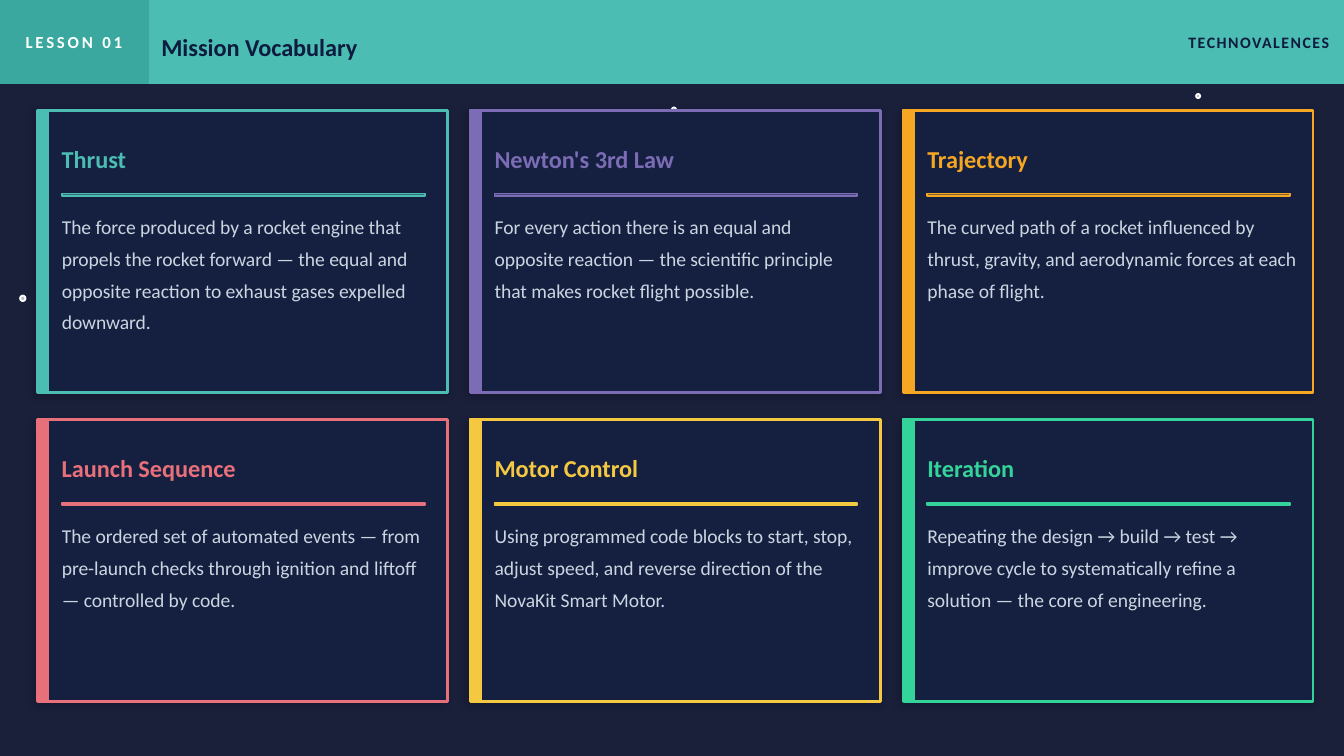
from lxml.etree import SubElement
from pptx import Presentation
from pptx.dml.color import RGBColor
from pptx.enum.shapes import MSO_SHAPE
from pptx.enum.text import MSO_ANCHOR, MSO_AUTO_SIZE, PP_ALIGN
from pptx.oxml.ns import qn
from pptx.util import Pt

FONT = "Calibri"
BACKGROUND = RGBColor(0x1A, 0x1F, 0x3A)
CARD = RGBColor(0x15, 0x20, 0x40)
NAVY = RGBColor(0x0D, 0x1B, 0x3E)
BODY = RGBColor(0xCB, 0xD5, 0xE1)
WHITE = RGBColor(0xFF, 0xFF, 0xFF)
TEAL = RGBColor(0x4B, 0xBD, 0xB3)
DARK_TEAL = RGBColor(0x3A, 0xA8, 0x9E)
PURPLE = RGBColor(0x7B, 0x6C, 0xB5)
ORANGE = RGBColor(0xF5, 0xA6, 0x23)
CORAL = RGBColor(0xE8, 0x70, 0x7A)
YELLOW = RGBColor(0xF5, 0xC8, 0x42)
GREEN = RGBColor(0x34, 0xD3, 0x99)

# Left, top, diameter, opacity in percent
STARS = [(360, 57.6, 2.16, 65), (640.8, 50.4, 2.16, 60), (10.8, 158.4, 2.88, 70)]

TERMS = [
    ("Thrust", TEAL, "The force produced by a rocket engine that propels the rocket forward — "
     "the equal and opposite reaction to exhaust gases expelled downward."),
    ("Newton's 3rd Law", PURPLE, "For every action there is an equal and opposite reaction — "
     "the scientific principle that makes rocket flight possible."),
    ("Trajectory", ORANGE, "The curved path of a rocket influenced by thrust, gravity, "
     "and aerodynamic forces at each phase of flight."),
    ("Launch Sequence", CORAL, "The ordered set of automated events — from pre-launch checks "
     "through ignition and liftoff — controlled by code."),
    ("Motor Control", YELLOW, "Using programmed code blocks to start, stop, adjust speed, "
     "and reverse direction of the NovaKit Smart Motor."),
    ("Iteration", GREEN, "Repeating the design → build → test → improve cycle to "
     "systematically refine a solution — the core of engineering."),
]


def add_block(slide, left, top, width, height, fill, line=None, line_width=1,
              opacity=100, preset=MSO_SHAPE.RECTANGLE):
    shape = slide.shapes.add_shape(preset, Pt(left), Pt(top), Pt(width), Pt(height))
    shape.shadow.inherit = False
    shape.fill.solid()
    shape.fill.fore_color.rgb = fill
    shape.line.color.rgb = line or fill
    shape.line.width = Pt(line_width)
    if opacity < 100:
        color = shape.element.spPr.find(qn("a:solidFill"))[0]
        SubElement(color, qn("a:alpha"), val=str(opacity * 1000))
    return shape


def add_shadow(shape):
    effects = shape.element.spPr.find(qn("a:effectLst"))
    shadow = SubElement(effects, qn("a:outerShdw"), blurRad=str(Pt(4)), dist=str(Pt(2)),
                        dir=str(135 * 60000), algn="bl", rotWithShape="0")
    color = SubElement(shadow, qn("a:srgbClr"), val="000000")
    SubElement(color, qn("a:alpha"), val="18000")


def format_text(shape, text, size, color, bold=True, align=PP_ALIGN.LEFT,
                anchor=MSO_ANCHOR.MIDDLE, top_inset=0, right_inset=0,
                tracking=0, line_spacing=None):
    frame = shape.text_frame
    frame.text = text
    frame.word_wrap = True
    frame.auto_size = MSO_AUTO_SIZE.NONE
    frame.vertical_anchor = anchor
    frame.margin_left = frame.margin_bottom = 0
    frame.margin_top, frame.margin_right = Pt(top_inset), Pt(right_inset)
    paragraph = frame.paragraphs[0]
    paragraph.alignment = align
    if line_spacing:
        paragraph.line_spacing = line_spacing
    font = paragraph.runs[0].font
    font.name, font.size, font.bold = FONT, Pt(size), bold
    font.color.rgb = color
    if tracking:
        paragraph.runs[0].font._element.set("spc", str(round(tracking * 100)))


def add_text(slide, left, top, width, height, text, size, color, **options):
    box = slide.shapes.add_textbox(Pt(left), Pt(top), Pt(width), Pt(height))
    format_text(box, text, size, color, **options)


def add_stars(slide):
    for left, top, diameter, opacity in STARS:
        add_block(slide, left, top, diameter, diameter, WHITE,
                  opacity=opacity, preset=MSO_SHAPE.OVAL)


def add_header(slide, left, top, width, height):
    tag_width, brand_width = 79.2, 165.6
    # Bar and lesson tag
    add_block(slide, left, top, width, height, TEAL)
    tag = add_block(slide, left, top, tag_width, height, DARK_TEAL)
    add_text(slide, left, top, tag_width, height, "LESSON 01", 9, WHITE,
             align=PP_ALIGN.CENTER, tracking=1.5)
    # Title, raised above the bar
    title = slide.shapes.title
    title.left, title.top = Pt(left + tag_width + 7.2), Pt(top)
    title.width, title.height = Pt(540), Pt(height)
    format_text(title, "Mission Vocabulary", 13, NAVY, top_inset=5.76)
    tag.element.addnext(title.element)
    # Programme name
    add_text(slide, left + width - brand_width, top, brand_width, height, "TECHNOVALENCES",
             8.5, NAVY, align=PP_ALIGN.RIGHT, right_inset=7.92, tracking=0.8)


def add_card(slide, left, top, width, height, term, color, definition):
    # Panel and accent stripe
    add_shadow(add_block(slide, left, top, width, height, CARD, color, 1.5))
    add_block(slide, left, top, 5.76, height, color)
    # Term, rule and definition
    text_left = left + 12.96
    add_text(slide, text_left, top + 8.64, width - 18, 34.56, term, 13, color)
    add_block(slide, text_left, top + 44.64, width - 25.2, 1.44, color, opacity=50)
    add_text(slide, text_left, top + 51.84, width - 21.6, 90, definition, 10.5, BODY,
             bold=False, anchor=MSO_ANCHOR.TOP, line_spacing=1.35)


def add_card_grid(slide, left, top, width, height, columns=3, rows=2):
    column_gap, row_gap = 12.24, 14.4
    card_width = (width - (columns - 1) * column_gap) / columns
    card_height = (height - (rows - 1) * row_gap) / rows
    for index, (term, color, definition) in enumerate(TERMS):
        row, column = divmod(index, columns)
        add_card(slide, left + column * (card_width + column_gap),
                 top + row * (card_height + row_gap), card_width, card_height,
                 term, color, definition)


def main():
    presentation = Presentation()
    presentation.slide_width, presentation.slide_height = Pt(720), Pt(405)
    slide = presentation.slides.add_slide(presentation.slide_layouts[5])
    slide.background.fill.solid()
    slide.background.fill.fore_color.rgb = BACKGROUND
    add_stars(slide)
    add_header(slide, 0, 0, 720, 44.64)
    add_card_grid(slide, 20.16, 59.04, 683.28, 316.8)
    presentation.save("out.pptx")


if __name__ == "__main__":
    main()
